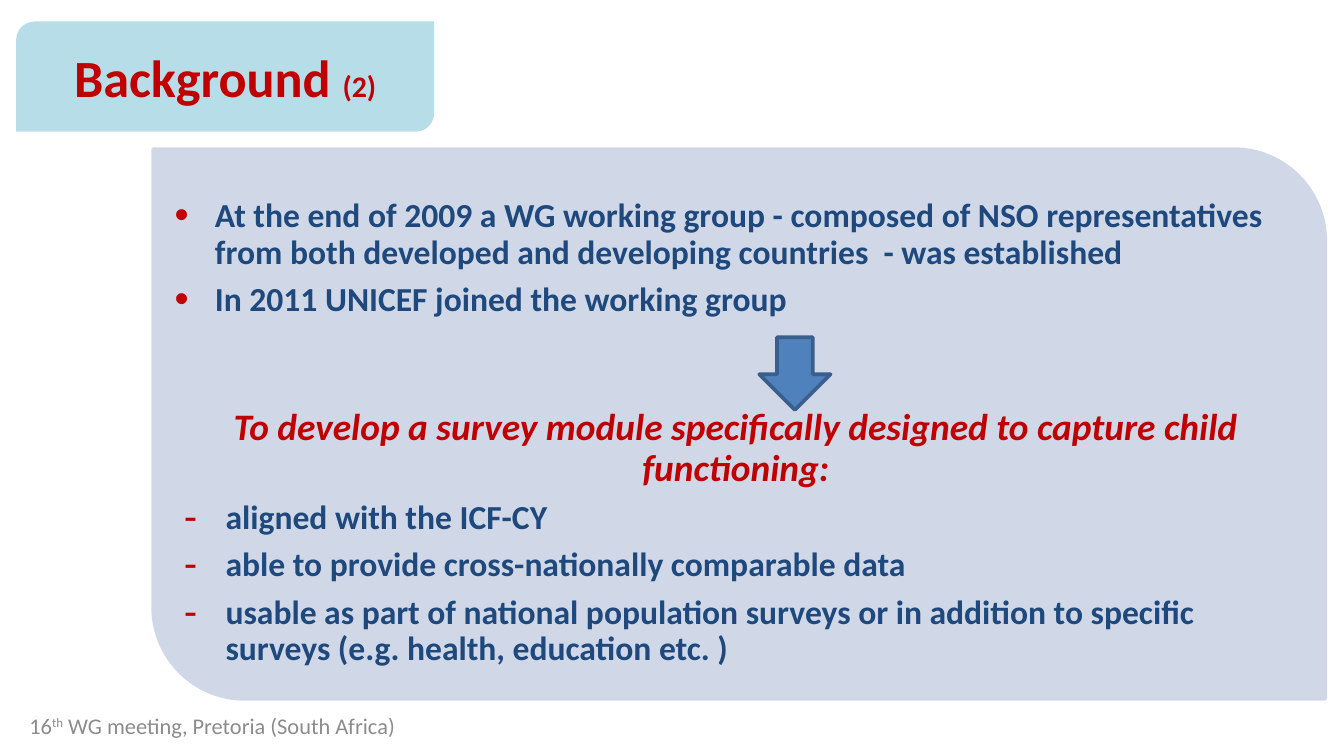
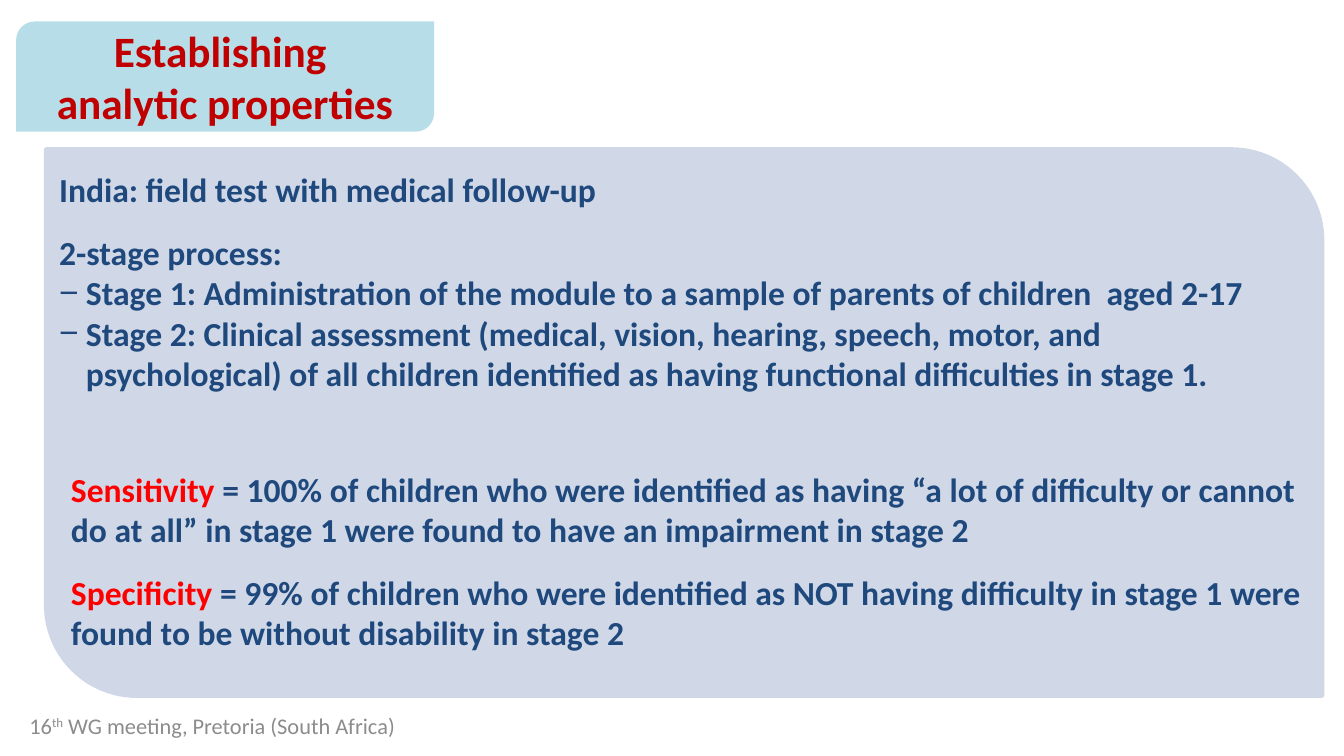
from lxml import etree
from pptx import Presentation
from pptx.dml.color import RGBColor
from pptx.enum import shapes, text
from pptx.oxml import ns
from pptx.util import Inches, Pt

PANEL_BLUE = RGBColor(0xD0, 0xD8, 0xE8)
TITLE_TEAL = RGBColor(0xB7, 0xDE, 0xE8)
ARROW_BLUE = RGBColor(0x4F, 0x81, 0xBD)
ARROW_EDGE = RGBColor(0x3A, 0x5F, 0x8C)
DARK_RED = RGBColor(0xC0, 0x00, 0x00)
RED = RGBColor(0xFF, 0x00, 0x00)
NAVY = RGBColor(0x1F, 0x49, 0x7D)
GREY = RGBColor(0x8C, 0x8C, 0x8C)

BODY = {"size": Pt(18), "bold": True, "color": NAVY}
TERM = {**BODY, "color": RED}
GOAL = {"size": Pt(20), "bold": True, "italic": True, "color": DARK_RED}
TITLE = {"size": Pt(28), "bold": True, "color": DARK_RED}
TITLE_NUMBER = {**TITLE, "size": Pt(16)}
TITLE_LONG = {**TITLE, "size": Pt(23.2)}
FOOTER = {"size": Pt(12), "color": GREY}

TIGHT = {"line_spacing": 0.9, "space_after": Pt(6)}
CENTERED = {"alignment": text.PP_ALIGN.CENTER}
GAP_ABOVE = {"space_before": Pt(12)}


def add_child(parent, tag, **values):
    child = etree.SubElement(parent, ns.qn(tag))
    for name, value in values.items():
        child.set(name, str(value))
    return child


def add_span(para, words, style, superscript=False):
    span = para.add_run()
    span.text = words
    span.font.name = "Calibri"
    for name, value in style.items():
        if name == "color":
            span.font.color.rgb = value
        else:
            setattr(span.font, name, value)
    if superscript:
        span.font._element.set("baseline", "30000")


def add_para(frame, spans, layout=None, bullet=None):
    """Fill the empty first paragraph or a new one with (words, style) spans."""
    para = frame.paragraphs[0]
    if para.runs:
        para = frame.add_paragraph()
    for name, value in (layout or {}).items():
        setattr(para, name, value)
    for span in spans:
        if span == "\n":
            para.add_line_break()
        else:
            add_span(para, *span)
    if bullet:
        set_bullet(para, **bullet)


def set_bullet(para, char, indent, color=None, percent=100):
    props = para._p.get_or_add_pPr()
    props.set("marL", str(Inches(indent)))
    props.set("indent", str(-Inches(indent)))
    if color is not None:
        add_child(add_child(props, "a:buClr"), "a:srgbClr", val=color)
    add_child(props, "a:buSzPct", val=percent * 1000)
    add_child(props, "a:buFont", typeface="Arial")
    add_child(props, "a:buChar", char=char)


def add_shape(page, kind, left, top, width, height, fill, line=None):
    shape = page.shapes.add_shape(
        kind, Inches(left), Inches(top), Inches(width), Inches(height))
    shape.shadow.inherit = False
    shape.fill.solid()
    shape.fill.fore_color.rgb = fill
    if line is None:
        shape.line.fill.background()
    else:
        shape.line.color.rgb = line
        shape.line.width = Pt(2)
    return shape


def add_panel(page, left, top, width, height):
    """Place a quarter-turned panel; the arguments give its visible box."""
    shift = (width - height) / 2
    panel = add_shape(page, shapes.MSO_SHAPE.ROUND_2_DIAG_RECTANGLE,
                      left + shift, top - shift, height, width,
                      PANEL_BLUE, PANEL_BLUE)
    panel.rotation = 90


def add_textbox(page, left, top, width, height, insets=(0.1, 0.05, 0.1, 0.05),
                wrap=True):
    box = page.shapes.add_textbox(
        Inches(left), Inches(top), Inches(width), Inches(height))
    frame = box.text_frame
    frame.word_wrap = wrap
    for side, inset in zip(("left", "top", "right", "bottom"), insets):
        setattr(frame, "margin_" + side, Inches(inset))
    return frame


def add_title(page, spans):
    box = add_shape(page, shapes.MSO_SHAPE.ROUND_2_DIAG_RECTANGLE,
                    0.12, 0.16, 3.11, 0.82, TITLE_TEAL)
    box.text_frame.word_wrap = True
    box.text_frame.vertical_anchor = text.MSO_ANCHOR.MIDDLE
    add_para(box.text_frame, spans, CENTERED)


def add_footer(page):
    frame = add_textbox(page, 0.12, 5.25, 3.01, 0.3, wrap=False)
    add_para(frame, [("16", FOOTER), ("th", FOOTER, True),
                     (" WG meeting, Pretoria (South Africa)", FOOTER)])


def add_page(deck, title, panel):
    page = deck.slides.add_slide(deck.slide_layouts[6])
    add_panel(page, *panel)
    add_title(page, title)
    add_footer(page)
    return page


def build_background(deck):
    page = add_page(deck, [("Background ", TITLE), ("(2)", TITLE_NUMBER)],
                    (1.14, 1.11, 8.72, 4.09))
    history = add_textbox(page, 1.14, 1.31, 8.86, 1.94,
                          (0.16, 0.17, 0.24, 0.14))
    dot = {"char": "•", "indent": 0.3, "color": DARK_RED, "percent": 120}
    for words in (
            "At the end of 2009 a WG working group - composed of NSO "
            "representatives from both developed and developing countries  "
            "- was established",
            "In 2011 UNICEF joined the working group"):
        add_para(history, [(words, BODY)], TIGHT, dot)

    add_shape(page, shapes.MSO_SHAPE.DOWN_ARROW, 5.65, 2.51, 0.53, 0.54,
              ARROW_BLUE, ARROW_EDGE)

    goals = add_textbox(page, 1.27, 2.99, 8.41, 2.05)
    add_para(goals, [("To develop a survey module specifically designed to "
                      "capture child functioning:", GOAL)],
             {**TIGHT, **CENTERED})
    dash = {**dot, "char": "-", "indent": 0.31}
    for words in (
            "aligned with the ICF-CY",
            "able to provide cross-nationally comparable data",
            "usable as part of national population surveys or in addition to "
            "specific surveys (e.g. health, education etc. )"):
        add_para(goals, [(words, BODY)], TIGHT, dash)


def build_properties(deck):
    page = add_page(deck, [("Establishing ", TITLE_LONG), "\n",
                           ("analytic properties", TITLE_LONG)],
                    (0.34, 1.11, 9.5, 4.07))
    stages = add_textbox(page, 0.28, 1.12, 9.51, 2.33,
                         (0.16, 0.14, 0.24, 0.14))
    add_para(stages, [("India: field test with medical follow-up", BODY)])
    add_para(stages, [("2-stage process:", BODY)], GAP_ABOVE)
    for words in (
            "Stage 1: Administration of the module to a sample of parents of "
            "children  aged 2-17",
            "Stage 2: Clinical assessment (medical, vision, hearing, speech, "
            "motor, and psychological) of all children identified as having "
            "functional difficulties in stage 1."):
        add_para(stages, [(words, BODY)],
                 bullet={"char": "−", "indent": 0.2})

    results = add_textbox(page, 0.43, 3.44, 9.36, 1.48)
    add_para(results, [
        ("Sensitivity", TERM),
        (" = 100% of children who were identified as having “a lot of "
         "difficulty or cannot do at all” in stage 1 were found to have an "
         "impairment in stage 2", BODY)])
    add_para(results, [
        ("Specificity", TERM),
        (" = 99% of children who were identified as NOT having difficulty in "
         "stage 1 were found to be without disability in stage 2", BODY)],
        GAP_ABOVE)


def main():
    deck = Presentation()
    deck.slide_width = Inches(10)
    deck.slide_height = Inches(10 * 9 / 16)
    build_background(deck)
    build_properties(deck)
    deck.save("out.pptx")


if __name__ == "__main__":
    main()
